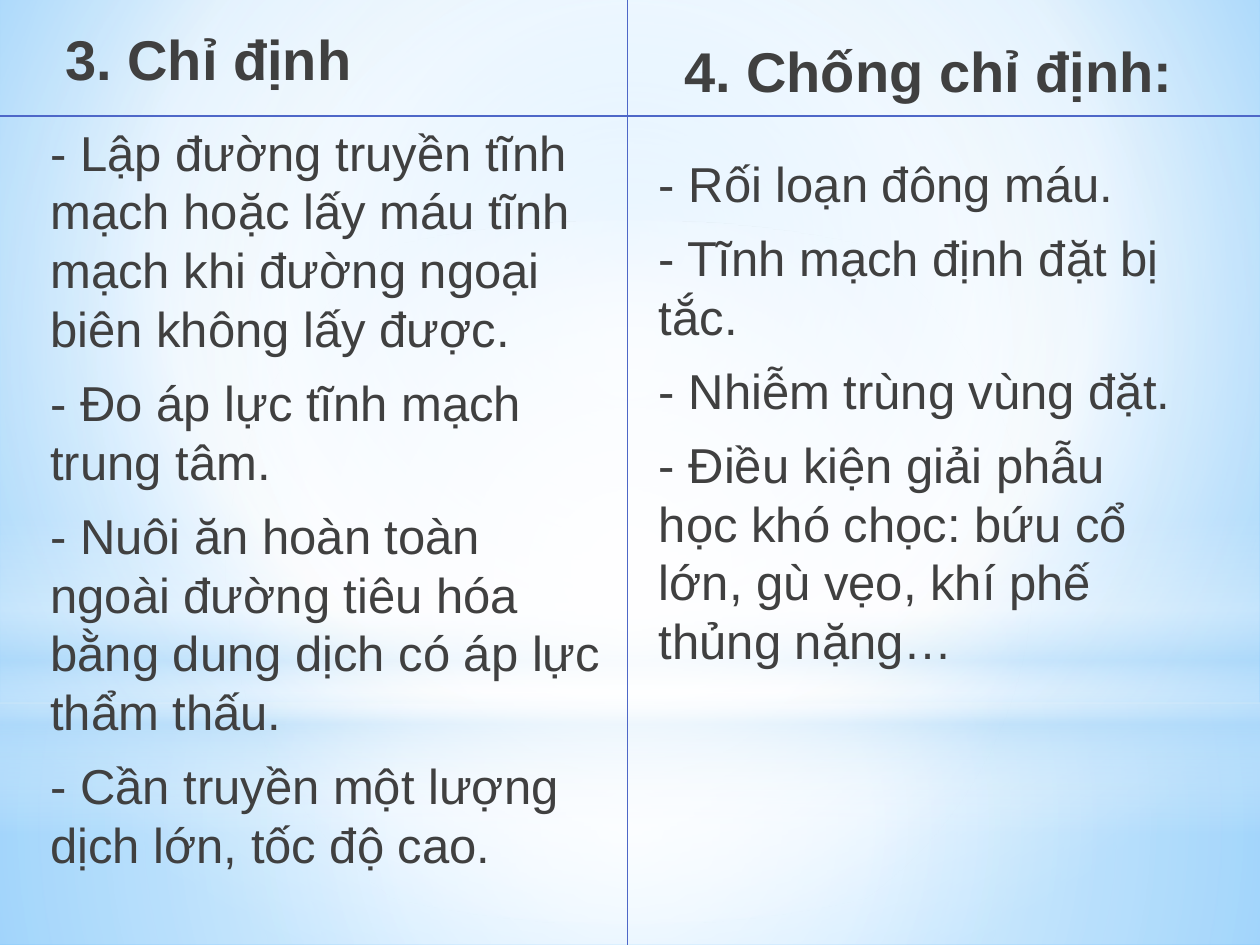
from dataclasses import dataclass

from lxml.etree import SubElement
from pptx import Presentation
from pptx.dml.color import RGBColor
from pptx.enum.shapes import MSO_CONNECTOR, MSO_SHAPE
from pptx.enum.text import MSO_ANCHOR, PP_ALIGN
from pptx.oxml import parse_xml
from pptx.oxml.ns import nsdecls, qn
from pptx.util import Inches, Pt

WIDTH, HEIGHT = 10, 7.5
TEXT, RULE = "404040", "4E67C8"
WHITE, SKY = "FFFFFF", "B4DCFA"
CENTER = (50, 50, 50, 50)


@dataclass
class Gradient:
    """Stops are (position %, colour, opacity %); without a focus it runs downwards."""
    stops: list[tuple[int, str, int]]
    focus: tuple[int, int, int, int] | None = None


@dataclass
class Glow:
    preset: MSO_SHAPE
    top: float
    height: float
    gradient: Gradient


@dataclass
class TextBlock:
    box: tuple[float, float, float, float]
    paragraphs: list[str]
    size: int
    bold: bool = False
    align: PP_ALIGN = PP_ALIGN.LEFT
    anchor: MSO_ANCHOR = MSO_ANCHOR.TOP
    indent: float = 0


BACKDROP = Gradient([(0, "9ED5FF", 100), (60, WHITE, 100), (100, "5BB9FF", 100)],
                    (20, 10, 20, 60))

GLOWS = [
    Glow(MSO_SHAPE.RECTANGLE, 5.58, 1.92,
         Gradient([(0, WHITE, 91), (37, WHITE, 76), (100, SKY, 79)], CENTER)),
    Glow(MSO_SHAPE.RECTANGLE, 0, 5.58,
         Gradient([(0, WHITE, 89), (48, WHITE, 62), (100, SKY, 79)], CENTER)),
    Glow(MSO_SHAPE.RECTANGLE, 4.12, 2.5,
         Gradient([(0, WHITE, 0), (29, WHITE, 30), (45, SKY, 40),
                   (55, WHITE, 26), (65, SKY, 60), (100, WHITE, 0)])),
    Glow(MSO_SHAPE.OVAL, 1.75, 5.58,
         Gradient([(0, WHITE, 100), (56, WHITE, 0)], CENTER)),
]

TEXT_BLOCKS = [
    TextBlock((0.42, 0.08, 4.41, 0.7), ["3. Chỉ định"], 32, bold=True,
              anchor=MSO_ANCHOR.BOTTOM),
    TextBlock((0.25, 0.92, 4.67, 6.33), [
        "- Lập đường truyền tĩnh mạch hoặc lấy máu tĩnh mạch khi đường ngoại biên "
        "không lấy được.",
        "- Đo áp lực tĩnh mạch trung tâm.",
        "- Nuôi ăn hoàn toàn ngoài đường tiêu hóa bằng dung dịch có áp lực thẩm thấu.",
        "- Cần truyền một lượng dịch lớn, tốc độ cao.",
    ], 28, indent=0.05),
    TextBlock((5.08, 0.17, 4.58, 0.7), ["4. Chống chỉ định:"], 32, bold=True,
              align=PP_ALIGN.CENTER, anchor=MSO_ANCHOR.BOTTOM),
    TextBlock((5.08, 1.17, 4.34, 5.92), [
        "- Rối loạn đông máu.",
        "- Tĩnh mạch định đặt bị tắc.",
        "- Nhiễm trùng vùng đặt.",
        "- Điều kiện giải phẫu học khó chọc: bứu cổ lớn, gù vẹo, khí phế thủng nặng…",
    ], 28, indent=0.05),
]

RULES = [((0, 0.92), (WIDTH, 0.92)), ((4.98, 0), (4.98, HEIGHT))]


def rgb(value: str) -> RGBColor:
    return RGBColor.from_string(value)


def apply_gradient(fill, properties, gradient: Gradient) -> None:
    """Put the gradient where the fill's element sits within properties."""
    stops = "".join(
        f'<a:gs pos="{position * 1000}"><a:srgbClr val="{color}">'
        f'<a:alpha val="{opacity * 1000}"/></a:srgbClr></a:gs>'
        for position, color, opacity in gradient.stops)
    if gradient.focus:
        left, top, right, bottom = (edge * 1000 for edge in gradient.focus)
        shade = (f'<a:path path="circle"><a:fillToRect l="{left}" t="{top}" '
                 f'r="{right}" b="{bottom}"/></a:path>')
    else:
        shade = '<a:lin ang="5400000" scaled="0"/>'
    fill.solid()
    properties.replace(
        properties.find(qn("a:solidFill")),
        parse_xml(f'<a:gradFill {nsdecls("a")} rotWithShape="1">'
                  f'<a:gsLst>{stops}</a:gsLst>{shade}</a:gradFill>'))


def add_glow(slide, glow: Glow) -> None:
    shape = slide.shapes.add_shape(glow.preset, 0, Inches(glow.top),
                                   Inches(WIDTH), Inches(glow.height))
    shape.shadow.inherit = False
    shape.line.fill.background()
    apply_gradient(shape.fill, shape._element.spPr, glow.gradient)


def add_text(slide, block: TextBlock) -> None:
    frame = slide.shapes.add_textbox(*map(Inches, block.box)).text_frame
    frame.word_wrap = True
    frame.vertical_anchor = block.anchor
    frame.margin_left = Inches(0.1 + block.indent)
    frame.text = "\n".join(block.paragraphs)
    for paragraph in frame.paragraphs:
        paragraph.alignment = block.align
        paragraph.space_before = Pt(block.size * 0.2)
        paragraph.space_after = Pt(3)
        for run in paragraph.runs:
            run.font.name = "Arial"
            run.font.size = Pt(block.size)
            run.font.bold = block.bold
            run.font.color.rgb = rgb(TEXT)


def add_rule(slide, start: tuple[float, float], end: tuple[float, float]) -> None:
    rule = slide.shapes.add_connector(MSO_CONNECTOR.STRAIGHT,
                                      *map(Inches, (*start, *end)))
    rule.line.color.rgb = rgb(RULE)
    rule.line.width = Pt(0.75)
    SubElement(rule._element.spPr, qn("a:effectLst"))


def main() -> None:
    presentation = Presentation()
    presentation.slide_width = Inches(WIDTH)
    presentation.slide_height = Inches(HEIGHT)
    slide = presentation.slides.add_slide(presentation.slide_layouts[6])

    backdrop_fill = slide.background.fill
    backdrop_fill.solid()
    apply_gradient(backdrop_fill, slide._element.find(f'.//{qn("p:bgPr")}'), BACKDROP)
    for glow in GLOWS:
        add_glow(slide, glow)
    for block in TEXT_BLOCKS:
        add_text(slide, block)
    for start, end in RULES:
        add_rule(slide, start, end)

    presentation.save("out.pptx")


if __name__ == "__main__":
    main()
